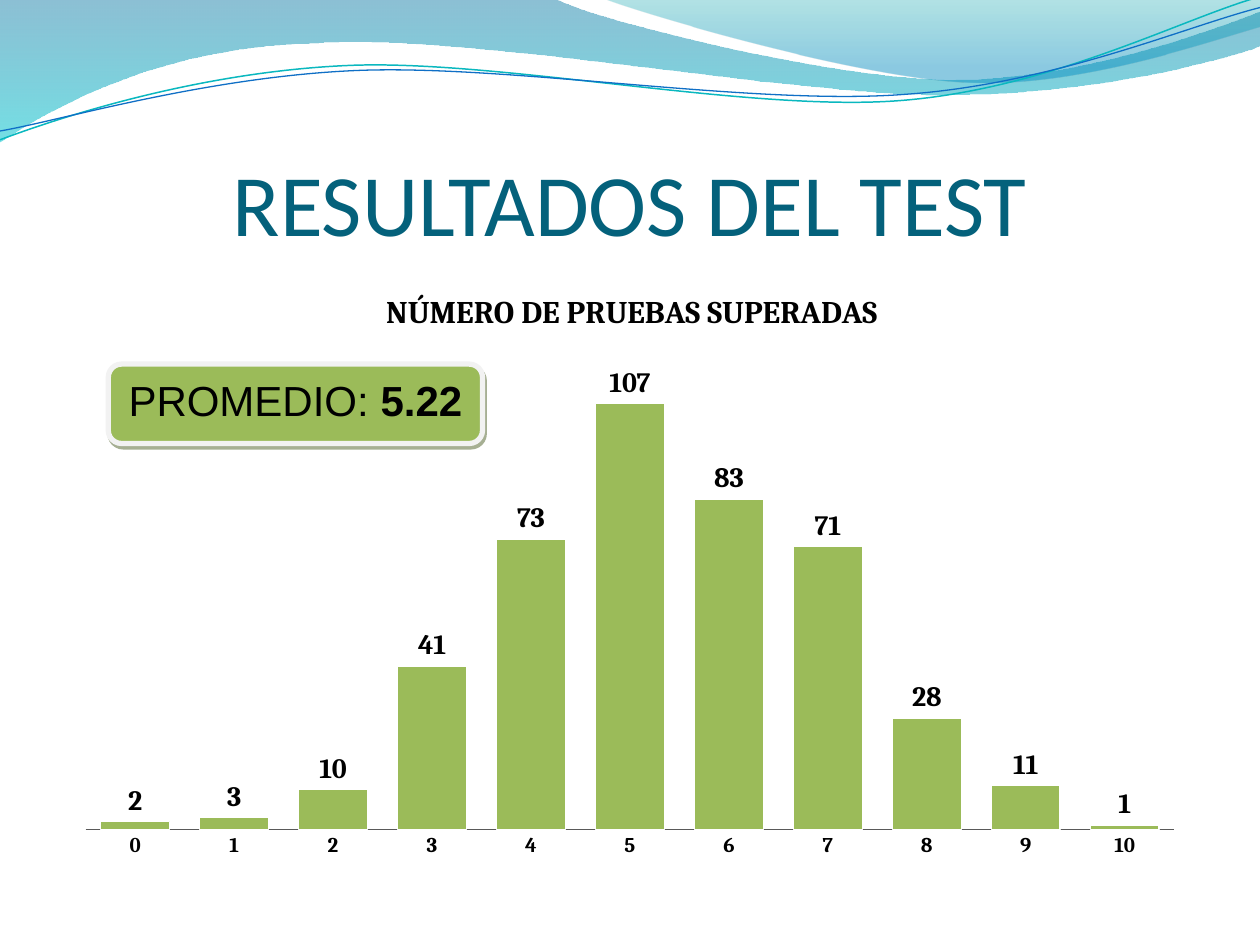
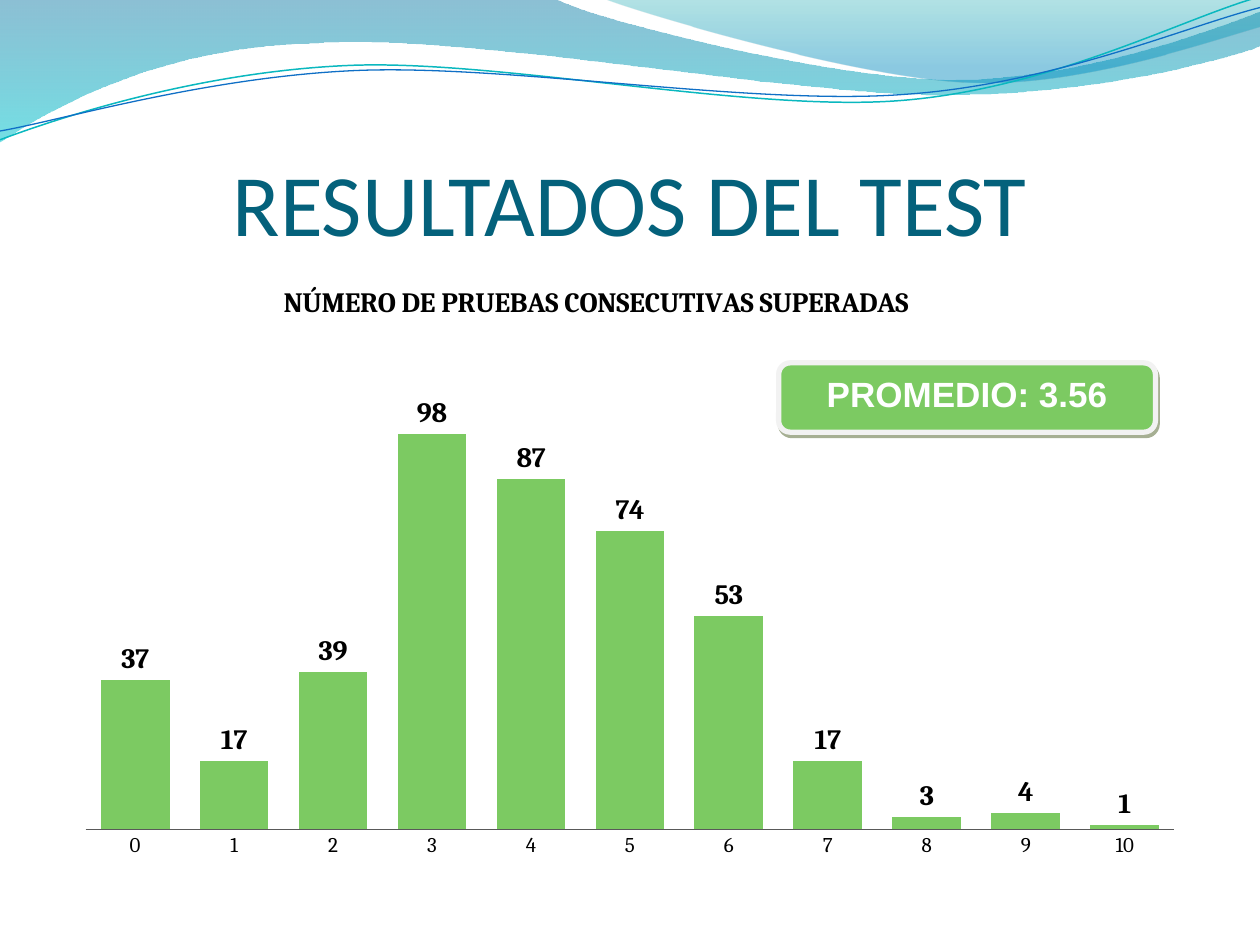
from dataclasses import dataclass

from lxml import etree
from pptx import Presentation
from pptx.chart.data import CategoryChartData
from pptx.dml.color import RGBColor
from pptx.enum.chart import XL_CHART_TYPE as ChartType
from pptx.enum.chart import XL_LABEL_POSITION as LabelPosition
from pptx.enum.chart import XL_TICK_MARK as TickMark
from pptx.enum.shapes import MSO_SHAPE as ShapeType
from pptx.enum.text import MSO_ANCHOR as Anchor
from pptx.enum.text import PP_ALIGN as Align
from pptx.oxml import parse_xml
from pptx.oxml.ns import nsdecls, qn
from pptx.util import Inches, Pt

# The slide is a grid of 10 columns by 7.5 rows
COLUMNS, ROWS = 10, 7.5
UNIT = Inches(1)

TITLE_FONT, CHART_FONT, BADGE_FONT = "Calibri", "Cambria", "Arial"
TITLE_BLUE = RGBColor(0x04, 0x61, 0x7B)
BLACK = RGBColor(0x00, 0x00, 0x00)
WHITE = RGBColor(0xFF, 0xFF, 0xFF)
AXIS_GREY = RGBColor(0x59, 0x59, 0x59)
BADGE_EDGE = RGBColor(0xF2, 0xF2, 0xF2)
BADGE_SHADOW = RGBColor(0x4E, 0x61, 0x28)
OLIVE = RGBColor(0x9B, 0xBB, 0x59)
GREEN = RGBColor(0x7C, 0xCA, 0x62)

# Header bands: outline, then gradient stops (position, colour, opacity %).
# A point of two numbers is a line end, one of six is a Bézier curve.
BANDS = [
    ([(0, 0), (4.4, -0.01), (4.76, 0.17, 6.64, 0.63, 7.58, 0.63),
      (8.53, 0.63, 9.58, 0.26, 10, 0.09), (10.01, 0.36),
      (9.83, 0.44, 8.7, 0.76, 7.46, 0.75), (6.22, 0.75, 3.82, 0.28, 2.57, 0.34),
      (1.29, 0.36, 0.46, 0.83, -0.01, 1.13), (0, 0)],
     [(0, RGBColor(0x00, 0x74, 0xA1), 45), (1, RGBColor(0x00, 0xC6, 0xCF), 55)]),
    ([(4.79, -0.01), (5.09, 0.11, 6.82, 0.62, 7.69, 0.65),
      (8.56, 0.69, 9.61, 0.32, 10, 0.21), (10, 0), (4.79, -0.01)],
     [(0, RGBColor(0x00, 0xA1, 0xA9), 30), (0.8, RGBColor(0x00, 0x8B, 0xBF), 45)]),
]
# Header waves: outline, colour, width
WAVES = [
    ([(0, 1.11), (0.48, 0.93, 1.58, 0.57, 2.77, 0.52),
      (3.95, 0.47, 5.93, 0.89, 7.13, 0.8), (8.33, 0.71, 9.38, 0.15, 9.98, -0.02)],
     RGBColor(0x0A, 0xB8, 0xBF), 0.85),
    ([(0, 1.04), (0.47, 0.96, 1.64, 0.61, 2.83, 0.56),
      (4.03, 0.51, 5.97, 0.84, 7.17, 0.75), (8.36, 0.67, 9.41, 0.21, 10, 0.06)],
     RGBColor(0x0F, 0x6F, 0xC6), 0.75),
]


@dataclass
class Result:
    """One histogram of test results with its average."""
    chart_title: str
    title_size: int
    title_corner: tuple
    plot_top: float
    counts: tuple
    color: RGBColor
    bar_edge: RGBColor | None
    bold_axis: bool
    badge_area: tuple
    badge_runs: list  # (text, bold)
    badge_size: int
    badge_color: RGBColor


RESULTS = [
    Result("NÚMERO DE PRUEBAS SUPERADAS", 18, (0.28, 0.03), 0.14,
           (2, 3, 10, 41, 73, 107, 83, 71, 28, 11, 1), OLIVE, WHITE, True,
           (0.86, 2.89, 2.97, 0.63), [("PROMEDIO: ", False), ("5.22", True)],
           24, BLACK),
    Result("NÚMERO DE PRUEBAS CONSECUTIVAS SUPERADAS", 16, (0.19, 0.02), 0.13,
           (37, 17, 39, 98, 87, 74, 53, 17, 3, 4, 1), GREEN, None, False,
           (6.18, 2.88, 2.99, 0.55), [("PROMEDIO: 3.56", True)],
           20, WHITE),
]


def units(*lengths):
    return [round(length * UNIT) for length in lengths]


def style_font(font, name, size, color, bold=False):
    font.name, font.size, font.bold = name, Pt(size), bold
    font.color.rgb = color


def bend(line, curve, shape):
    """Turn a straight segment into a Bézier curve."""
    line.tag_points = None


def add_outline(slide, outline, close):
    """Build the outline from its end points, then bend the curved segments."""
    start, *ends = [units(*segment[-2:]) for segment in outline]
    builder = slide.shapes.build_freeform(*start)
    builder.add_line_segments(ends, close=close)
    shape = builder.convert_to_shape()
    shape.shadow.inherit = False
    lines = list(shape._element.spPr.iter(qn("a:lnTo")))
    for line, segment in zip(lines, outline[1:]):
        if len(segment) == 2:
            continue
        curve = etree.Element(qn("a:cubicBezTo"))
        numbers = units(*segment)
        for x, y in zip(numbers[::2], numbers[1::2]):
            etree.SubElement(curve, qn("a:pt"), x=str(x - shape.left), y=str(y - shape.top))
        line.getparent().replace(line, curve)
    return shape


def add_band(slide, outline, stops):
    shape = add_outline(slide, outline, close=True)
    shape.line.fill.background()
    shape.fill.gradient()
    shape.fill.gradient_angle = 270
    for stop, (position, color, _) in zip(shape.fill.gradient_stops, stops):
        stop.position = position
        stop.color.rgb = color
    colors = shape._element.spPr.iter(qn("a:srgbClr"))
    for color_element, (_, _, opacity) in zip(colors, stops):
        etree.SubElement(color_element, qn("a:alpha"), val=str(opacity * 1000))
    return shape


def add_wave(slide, outline, color, width):
    shape = add_outline(slide, outline, close=False)
    shape.fill.background()
    shape.line.color.rgb = color
    shape.line.width = Pt(width)
    return shape


def move_header_to_layout(slide, layout):
    """Draw the header once and let every slide inherit it."""
    shapes = [add_band(slide, *band) for band in BANDS]
    shapes += [add_wave(slide, *wave) for wave in WAVES]
    for index, shape in enumerate(shapes):
        layout.shapes._spTree.insert(2 + index, shape._element)


def place_layout_title(layout):
    title = layout.placeholders[0]
    title.left, title.top, title.width, title.height = units(0.5, 0.77, 9, 1.25)
    frame = title.text_frame
    frame.vertical_anchor = Anchor.BOTTOM
    frame.margin_left, frame.margin_top, frame.margin_right, frame.margin_bottom = (
        units(0, 0.05, 0, 0))


def set_title(slide, text):
    slide.shapes.title.text_frame.text = text
    paragraph = slide.shapes.title.text_frame.paragraphs[0]
    paragraph.alignment = Align.CENTER
    style_font(paragraph.runs[0].font, TITLE_FONT, 50, TITLE_BLUE)


def set_chart_layout(parent, before, target=None, **shares):
    """Place a chart part by shares of the chart's size."""
    for old in parent.findall(qn("c:layout")):
        parent.remove(old)
    layout = etree.Element(qn("c:layout"))
    manual = etree.SubElement(layout, qn("c:manualLayout"))
    if target:
        etree.SubElement(manual, qn("c:layoutTarget"), val=target)
    for name in ("x", "y"):
        etree.SubElement(manual, qn(f"c:{name}Mode"), val="edge")
    for name, share in shares.items():
        etree.SubElement(manual, qn(f"c:{name}"), val=str(share))
    parent.find(qn(before)).addprevious(layout)


def add_histogram(slide, result):
    data = CategoryChartData()
    data.categories = [str(passed) for passed in range(len(result.counts))]
    data.add_series("Series 1", result.counts)
    chart = slide.shapes.add_chart(
        ChartType.COLUMN_CLUSTERED, *units(0.5, 2.12, 9, 4.8), data).chart
    style_font(chart.font, CHART_FONT, 10, BLACK)
    chart.has_legend = False

    # Chart title
    frame = chart.chart_title.text_frame
    frame.text = result.chart_title
    style_font(frame.paragraphs[0].runs[0].font, CHART_FONT, result.title_size, BLACK, True)
    left, top = result.title_corner
    chart.chart_title.include_in_layout = False
    set_chart_layout(chart.chart_title._element, "c:overlay", x=left, y=top)

    # Axes
    chart.value_axis.visible = False
    chart.value_axis.has_major_gridlines = False
    chart.value_axis.minimum_scale, chart.value_axis.maximum_scale = 0, 120
    axis = chart.category_axis
    axis.major_tick_mark = axis.minor_tick_mark = TickMark.NONE
    axis.format.line.color.rgb = AXIS_GREY
    style_font(axis.tick_labels.font, CHART_FONT, 12, BLACK, result.bold_axis)

    # Bars and their values
    plot = chart.plots[0]
    plot.gap_width, plot.overlap, plot.vary_by_categories = 44, 59, False
    set_chart_layout(chart._chartSpace.chart.plotArea, "c:barChart", "inner",
                     x=0.02, y=result.plot_top, w=0.96, h=round(0.93 - result.plot_top, 2))
    bars = plot.series[0].format
    bars.fill.solid()
    bars.fill.fore_color.rgb = result.color
    if result.bar_edge:
        bars.line.color.rgb = result.bar_edge
        bars.line.width = Pt(0.75)
    plot.has_data_labels = True
    labels = plot.data_labels
    labels.show_value = True
    labels.position = LabelPosition.OUTSIDE_END
    style_font(labels.font, CHART_FONT, 16, BLACK, True)


def add_hard_shadow(shape):
    shape.shadow.inherit = False
    shape._element.spPr.find(qn("a:effectLst")).append(parse_xml(
        f'<a:outerShdw {nsdecls("a")} blurRad="0" dist="{Pt(2.2)}" dir="{63 * 60000}" '
        f'algn="ctr" rotWithShape="0"><a:srgbClr val="{BADGE_SHADOW}">'
        '<a:alpha val="50000"/></a:srgbClr></a:outerShdw>'))


def add_average_badge(slide, result):
    badge = slide.shapes.add_shape(ShapeType.ROUNDED_RECTANGLE, *units(*result.badge_area))
    badge.fill.solid()
    badge.fill.fore_color.rgb = result.color
    badge.line.color.rgb = BADGE_EDGE
    badge.line.width = Pt(3)
    add_hard_shadow(badge)
    badge.text_frame.vertical_anchor = Anchor.TOP
    paragraph = badge.text_frame.paragraphs[0]
    paragraph.alignment = Align.CENTER
    paragraph.space_after = Pt(10)
    for text, bold in result.badge_runs:
        run = paragraph.add_run()
        run.text = text
        style_font(run.font, BADGE_FONT, result.badge_size, result.badge_color, bold)


def main():
    presentation = Presentation()
    presentation.slide_width, presentation.slide_height = units(COLUMNS, ROWS)
    layout = presentation.slide_layouts.get_by_name("Title Only")
    place_layout_title(layout)
    for result in RESULTS:
        slide = presentation.slides.add_slide(layout)
        if result is RESULTS[0]:
            move_header_to_layout(slide, layout)
        set_title(slide, "RESULTADOS DEL TEST")
        add_histogram(slide, result)
        add_average_badge(slide, result)
    presentation.save("out.pptx")


if __name__ == "__main__":
    main()
